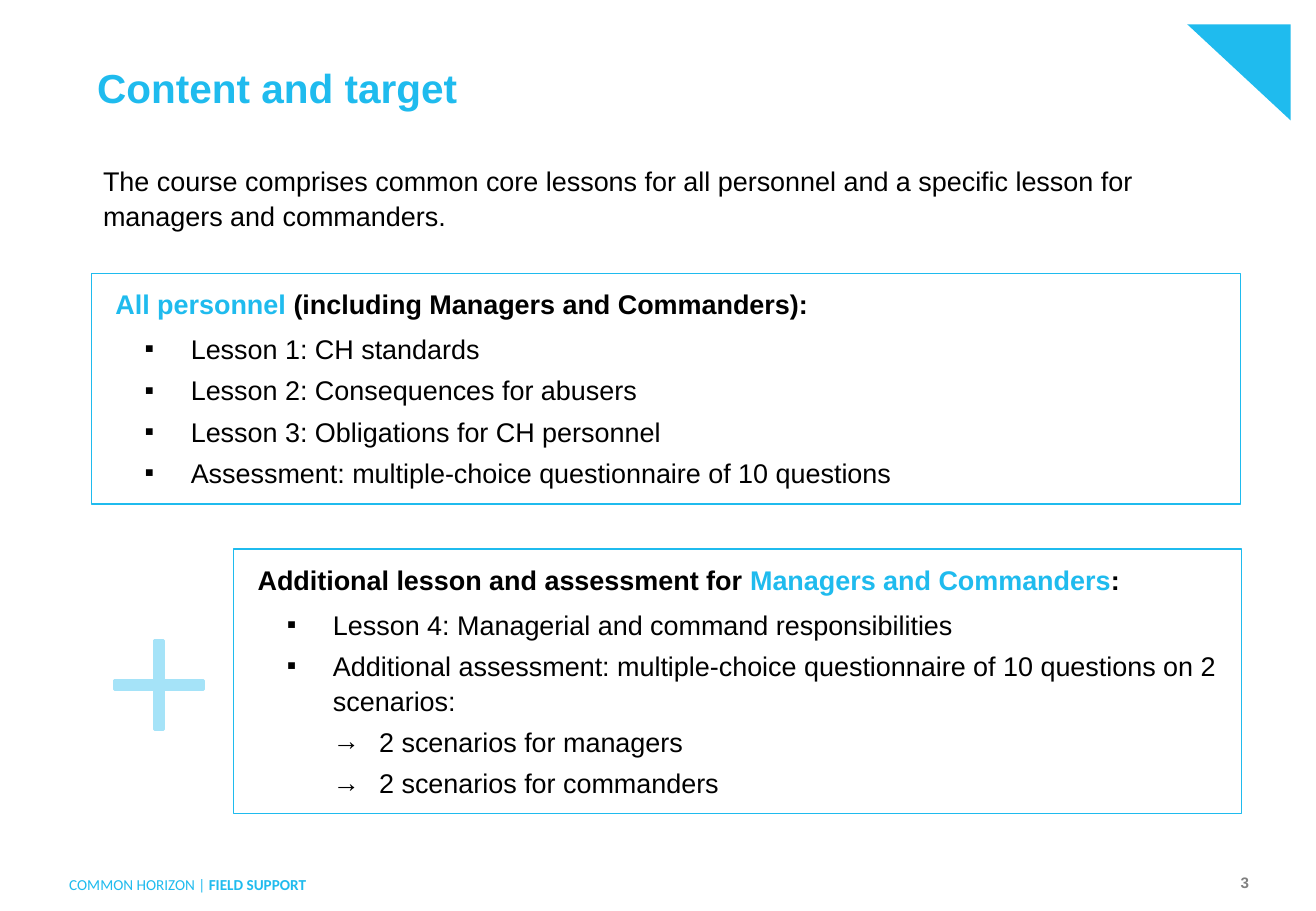
"""Build the "Content and target" slide."""
from lxml import etree
from pptx import Presentation
from pptx.dml.color import RGBColor
from pptx.enum.shapes import MSO_SHAPE
from pptx.enum.text import MSO_ANCHOR, MSO_AUTO_SIZE, PP_ALIGN
from pptx.oxml.ns import qn
from pptx.util import Inches, Pt

BLUE, PALE, BLACK, GREY = "1FBBEE", "A5E3F8", "000000", "808080"


def rgb(value):
    """Turn a hex string into a colour."""
    return RGBColor.from_string(value)


def write(sp, paras, size, margins, font="Arial", spacing=1.0):
    """Fill a shape with paragraphs of (runs, bullet, left indent, space after)."""
    tf = sp.text_frame
    tf.word_wrap = True
    tf.auto_size = MSO_AUTO_SIZE.NONE
    tf.vertical_anchor = MSO_ANCHOR.TOP
    tf.margin_left = tf.margin_right = Inches(margins[0])
    tf.margin_top = tf.margin_bottom = Inches(margins[1])
    for i, (runs, bullet, left, after) in enumerate(paras):
        p = tf.add_paragraph() if i else tf.paragraphs[0]
        p.alignment = PP_ALIGN.LEFT
        p.line_spacing = spacing
        p.space_before, p.space_after = Pt(0), Pt(after)
        pPr = p._p.get_or_add_pPr()
        pPr.set("marL", str(Inches(left)))
        pPr.set("indent", str(Inches(-0.38 if bullet else 0)))
        if bullet:
            etree.SubElement(pPr, qn("a:buFont")).set("typeface", "Arial")
            etree.SubElement(pPr, qn("a:buChar")).set("char", bullet)
        else:
            etree.SubElement(pPr, qn("a:buNone"))
        for text, color, bold in runs:
            r = p.add_run()
            r.text = text
            r.font.name, r.font.size, r.font.bold = font, Pt(size), bold
            r.font.color.rgb = rgb(color)


prs = Presentation()
prs.slide_width, prs.slide_height = Inches(10.83), Inches(7.5)
s = prs.slides.add_slide(prs.slide_layouts[3])
title, all_box, extra_box = list(s.placeholders)[:3]

fb = s.shapes.build_freeform(Inches(9.77), Inches(0.2), scale=1.0)
fb.add_line_segments([(Inches(10.62), Inches(0.2)), (Inches(10.62), Inches(0.99))])
corner = fb.convert_to_shape()
corner.shadow.inherit = False
corner.fill.solid()
corner.fill.fore_color.rgb = rgb(BLUE)
corner.line.fill.background()

plus = s.shapes.add_shape(MSO_SHAPE.MATH_PLUS, Inches(0.81), Inches(5.14), Inches(1), Inches(1))
plus.adjustments[0] = 0.075
plus.shadow.inherit = False
plus.fill.solid()
plus.fill.fore_color.rgb = rgb(PALE)
plus.line.color.rgb = rgb(PALE)
plus.line.width = Pt(2)

intro = s.shapes.add_textbox(0, 0, 0, 0)
footer = s.shapes.add_textbox(0, 0, 0, 0)
number = s.shapes.add_textbox(0, 0, 0, 0)
places = [
    (title, 0.75, 0.47, 8.88, 0.79),
    (intro, 0.75, 1.29, 9.4, 0.75),
    (all_box, 0.75, 2.25, 9.46, 1.9),
    (extra_box, 1.92, 4.52, 8.3, 2.18),
    (footer, 0.52, 7.13, 8.53, 0.28),
    (number, 10.03, 7.14, 0.3, 0.25),
]
for sp, left, top, width, height in places:
    sp.left, sp.top = Inches(left), Inches(top)
    sp.width, sp.height = Inches(width), Inches(height)

write(title, [([("Content and target", BLUE, True)], None, 0, 0)], 24, (0.05, 0.05))
write(intro, [([("The course comprises common core lessons for all personnel and a "
                 "specific lesson for managers and commanders.", BLACK, False)], None, 0, 12)],
      16, (0.1, 0.05), spacing=1.07)
write(footer, [([("COMMON HORIZON | ", BLUE, False), ("FIELD SUPPORT", BLUE, True)], None, 0, 0)],
      9, (0.05, 0.05), "Calibri", 1.2)
write(number, [([("3", GREY, True)], None, 0, 0)], 9, (0.05, 0.05))
number.text_frame.paragraphs[0].alignment = PP_ALIGN.RIGHT
number.text_frame.vertical_anchor = MSO_ANCHOR.MIDDLE

boxes = [
    (all_box,
     [("All personnel ", BLUE, True), ("(including Managers and Commanders):", BLACK, True)],
     [("▪", "Lesson 1: CH standards"),
      ("▪", "Lesson 2: Consequences for abusers"),
      ("▪", "Lesson 3: Obligations for CH personnel"),
      ("▪", "Assessment: multiple-choice questionnaire of 10 questions")]),
    (extra_box,
     [("Additional lesson and assessment for ", BLACK, True),
      ("Managers and Commanders", BLUE, True), (":", BLACK, True)],
     [("▪", "Lesson 4: Managerial and command responsibilities"),
      ("▪", "Additional assessment: multiple-choice questionnaire of 10 questions on 2 scenarios:"),
      ("→", "2 scenarios for managers"),
      ("→", "2 scenarios for commanders")]),
]
indents = {"▪": 0.62, "→": 1}
for sp, heading, items in boxes:
    sp.line.color.rgb = rgb(BLUE)
    sp.line.width = Pt(0.75)
    paras = [(heading, None, 0, 6)]
    paras += [([(text, BLACK, False)], bullet, indents[bullet], 4) for bullet, text in items]
    write(sp, paras, 16, (0.2, 0.1), spacing=1.07)

prs.save("out.pptx")
